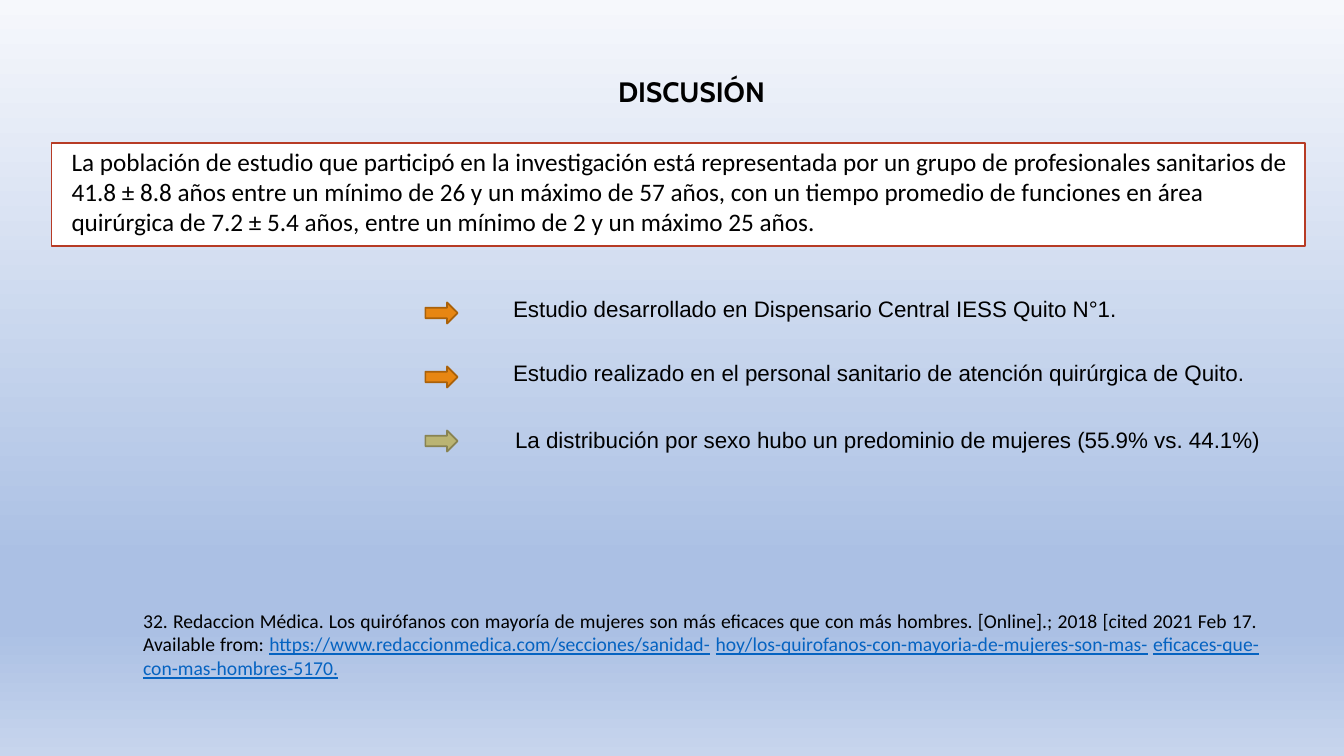
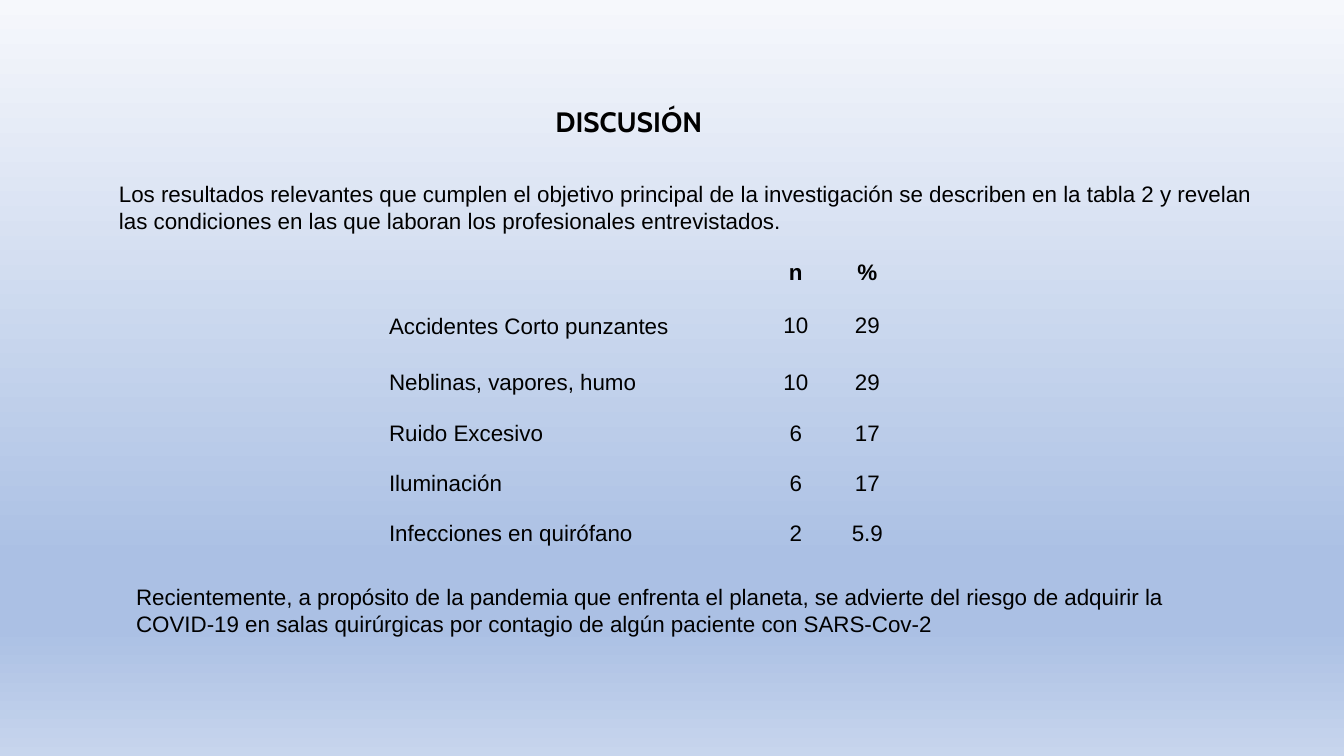
from lxml.etree import SubElement
from pptx import Presentation
from pptx.dml.color import RGBColor
from pptx.enum.shapes import MSO_SHAPE
from pptx.enum.text import MSO_ANCHOR, PP_ALIGN as AL
from pptx.oxml.ns import qn
from pptx.util import Pt

# Content
TITLE = "DISCUSIÓN"
POPULATION = (
    "La población de estudio que participó en la investigación está representada por un grupo "
    "de profesionales sanitarios de 41.8 ± 8.8 años entre un mínimo de 26 y un máximo de 57 años, "
    "con un tiempo promedio de funciones en área quirúrgica de 7.2 ± 5.4 años, "
    "entre un mínimo de 2 y un máximo 25 años."
)
CITATION = [
    ("32. Redaccion Médica. Los quirófanos con mayoría de mujeres son más eficaces que con más "
     "hombres. [Online].; 2018 [cited 2021 Feb 17. Available from: ", False),
    ("https://www.redaccionmedica.com/secciones/sanidad-", True),
    (" ", False),
    ("hoy/los-quirofanos-con-mayoria-de-mujeres-son-mas-", True),
    (" ", False),
    ("eficaces-que-con-mas-hombres-5170.", True),
]
INTRO = (
    "Los resultados relevantes que cumplen el objetivo principal de la investigación se describen "
    "en la tabla 2 y revelan las condiciones en las que laboran los profesionales entrevistados."
)
CLOSING = (
    "Recientemente, a propósito de la pandemia que enfrenta el planeta, se advierte del riesgo de "
    "adquirir la COVID-19 en salas quirúrgicas por contagio de algún paciente con SARS-Cov-2"
)
RISKS = [
    ("", "n", "%"),
    ("Accidentes Corto punzantes", "10", "29"),
    ("Neblinas, vapores, humo", "10", "29"),
    ("Ruido Excesivo", "6", "17"),
    ("Iluminación", "6", "17"),
    ("Infecciones en quirófano", "2", "5.9"),
]

# Shared look
PX = 9144  # 100 px to the inch
BLACK = RGBColor(0x00, 0x00, 0x00)
WHITE = RGBColor(0xFF, 0xFF, 0xFF)
RED = RGBColor(0xB7, 0x3B, 0x25)
LINK = RGBColor(0x05, 0x63, 0xC1)
ORANGE = RGBColor(0xE7, 0x86, 0x12)
BROWN = RGBColor(0xAA, 0x61, 0x09)
KHAKI = RGBColor(0xBA, 0xB4, 0x73)
OLIVE = RGBColor(0x88, 0x83, 0x52)
BACKGROUND = [(0, "F6F8FC"), (74, "ABC0E4"), (83, "ABC0E4"), (100, "C7D5ED")]
NO_STYLE_NO_GRID = "{2D5ABB26-0587-4C30-8999-92F81FD0307C}"

# Each point: text, left, top, width, fill, outline
POINTS = [
    ("Estudio desarrollado en Dispensario Central IESS Quito N°1.", 508, 292, 611, ORANGE, BROWN),
    ("Estudio realizado en el personal sanitario de atención quirúrgica de Quito.",
     508, 355, 775, ORANGE, BROWN),
    ("La distribución por sexo hubo un predominio de mujeres (55.9% vs. 44.1%)",
     510, 422, 773, KHAKI, OLIVE),
]
ARROW_LEFT, ARROW_TOP, ARROW_PITCH = 422, 300, 63.5
COLS = [359, 89, 59]
ROWS = [52, 52, 50, 50, 50, 50]
INDENTS = [3, 6, 0]


def px(*values):
    return [int(v * PX) for v in values]


def write(tf, text, size=16, font="Arial", bold=False, align=AL.LEFT, spacing=None):
    """Fill a frame with text, or with (text, is_link) runs."""
    p = tf.paragraphs[0]
    p.alignment, p.line_spacing = align, spacing
    runs = [(text, False)] if isinstance(text, str) else text
    for part, is_link in runs:
        r = p.add_run()
        r.text = part
        r.font.size, r.font.name, r.font.bold = Pt(size), font, bold
        r.font.color.rgb = LINK if is_link else BLACK
        r.font.underline = is_link


def set_margins(target, left=1, top=1):
    target.margin_left, target.margin_top = px(left, top)
    target.margin_right = target.margin_bottom = 0


def add_text(s, text, box, **fmt):
    tf = s.shapes.add_textbox(*px(*box)).text_frame
    tf.word_wrap = True
    set_margins(tf)
    write(tf, text, **fmt)


def add_title(s, box, align):
    add_text(s, TITLE, box, size=20, font="Cabin", bold=True, align=align)


def add_shape(s, kind, box, fill, line):
    sp = s.shapes.add_shape(kind, *px(*box))
    sp.shadow.inherit = False
    sp.fill.solid()
    sp.fill.fore_color.rgb = fill
    sp.line.color.rgb, sp.line.width = line, Pt(1.2)
    return sp


def set_background(master):
    fill = master.background.fill
    fill.gradient()
    fill.gradient_angle = 270
    stops = master.element.find(".//" + qn("p:bg")).find(".//" + qn("a:gsLst"))
    for stop in list(stops):
        stops.remove(stop)
    for pos, color in BACKGROUND:
        gs = SubElement(stops, qn("a:gs"), pos=str(pos * 1000))
        SubElement(gs, qn("a:srgbClr"), val=color)


def build_population(s):
    add_title(s, (86, 73, 1199, 35), AL.CENTER)

    # Framed summary
    tf = add_shape(s, MSO_SHAPE.RECTANGLE, (51, 142, 1244, 102), WHITE, RED).text_frame
    tf.word_wrap, tf.vertical_anchor = True, MSO_ANCHOR.TOP
    set_margins(tf, left=20, top=3)
    write(tf, POPULATION, size=18, font="Calibri")

    # Arrow points
    for i, (text, left, top, width, fill, line) in enumerate(POINTS):
        add_text(s, text, (left, top, width, 28))
        arrow = (ARROW_LEFT, ARROW_TOP + i * ARROW_PITCH, 32, 21)
        add_shape(s, MSO_SHAPE.RIGHT_ARROW, arrow, fill, line)

    add_text(s, CITATION, (141, 603, 1108, 72), size=14, font="Calibri", align=AL.JUSTIFY)


def build_risks(s):
    add_title(s, (550, 103, 230, 35), AL.LEFT)
    add_text(s, INTRO, (117, 178, 1150, 84))

    # Risk table
    box = px(383, 262, sum(COLS), sum(ROWS))
    table = s.shapes.add_table(len(ROWS), len(COLS), *box).table
    table.first_row = table.horz_banding = False
    table._tbl.find(".//" + qn("a:tableStyleId")).text = NO_STYLE_NO_GRID
    for col, width in zip(table.columns, COLS):
        col.width = width * PX
    for i, (row, height) in enumerate(zip(RISKS, ROWS)):
        table.rows[i].height = height * PX
        for j, text in enumerate(row):
            cell = table.cell(i, j)
            cell.fill.background()
            set_margins(cell, left=INDENTS[j], top=0)
            write(cell.text_frame, text, bold=i == 0, align=AL.CENTER if j else AL.LEFT,
                  spacing=Pt(19 if i > 1 else 15.2 if j else 16.1))

    add_text(s, CLOSING, (134, 578, 1115, 55))


def main():
    prs = Presentation()
    prs.slide_width, prs.slide_height = px(1333.33, 750)
    set_background(prs.slide_master)
    for build in (build_population, build_risks):
        build(prs.slides.add_slide(prs.slide_layouts[6]))
    prs.save("out.pptx")


if __name__ == "__main__":
    main()
